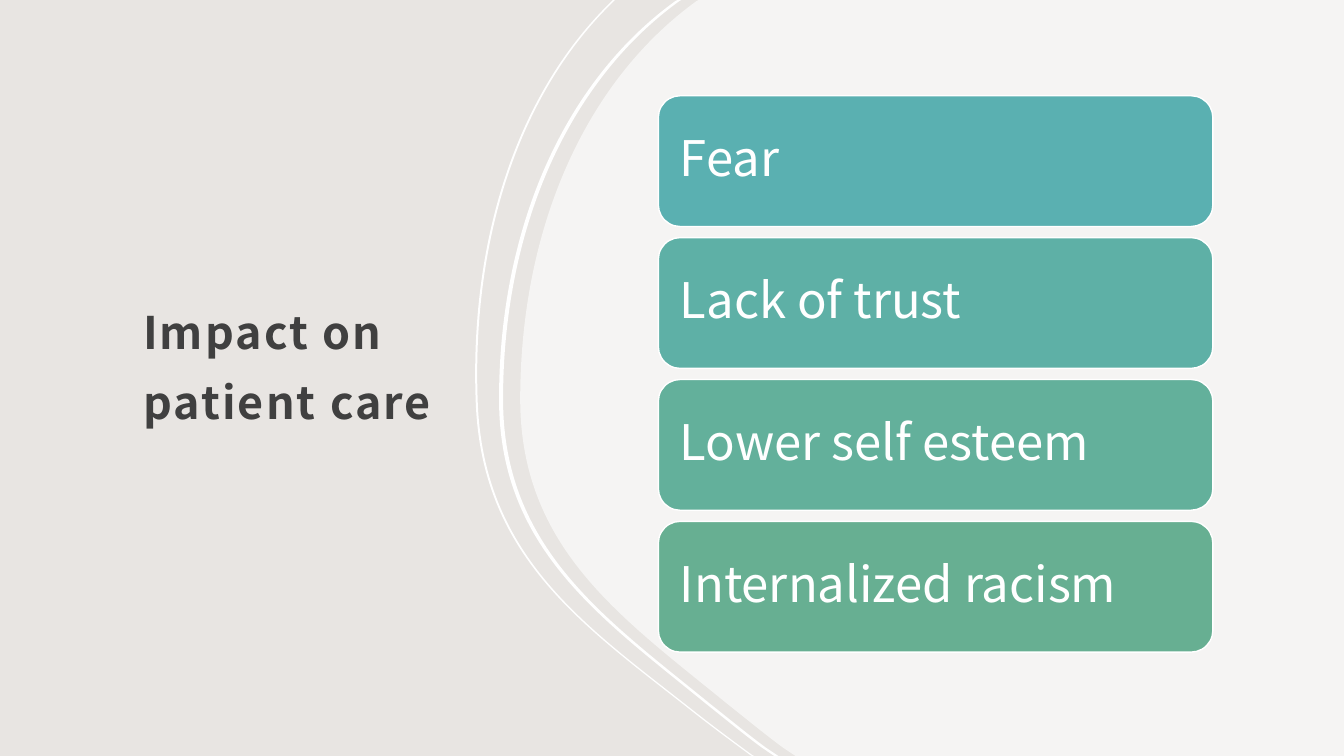
import pptx
import pptx.util
import pptx.dml.color
import pptx.enum.shapes
import pptx.enum.text
import pptx.oxml.ns
import lxml.etree

WIDE, HIGH = 13.33, 7.5
FONT = "Noto Sans CJK JP"
WHITE = "FFFFFF"
ITEMS = [
    ("Fear", "5AB0B1"),
    ("Lack of trust", "5EB0A6"),
    ("Lower self esteem", "63B09B"),
    ("Internalized racism", "67AF92"),
]
MAIN = [
    [(6.93, 0), (6.91, 0.01)],
    [(6.91, 0.01), (5.79, 0.82), (5.16, 2.29), (5.16, 3.96)],
    [(5.16, 3.96), (5.16, 5.44), (6.17, 6.13), (7.21, 6.98)],
    [(7.21, 6.98), (7.4, 7.13), (7.58, 7.28), (7.77, 7.42)],
    [(7.77, 7.42), (7.89, 7.5)],
]
OUTER = [
    [(6.08, 0), (6.05, 0.03)],
    [(6.05, 0.03), (5.12, 0.94), (4.65, 2.4), (4.72, 4.02)],
    [(4.72, 4.02), (4.79, 5.55), (5.82, 6.23), (6.87, 7.06)],
    [(6.87, 7.06), (7.06, 7.21), (7.25, 7.35), (7.44, 7.49)],
    [(7.44, 7.49), (7.46, 7.5)],
]


def paint(part, color):
    """Give a fill, line or font one solid colour."""
    if hasattr(part, "solid"):
        part.solid()
        part = part.fore_color
    else:
        part = part.color
    part.rgb = pptx.dml.color.RGBColor.from_string(color)


def style(item, form):
    """Set attributes from a dict of format values."""
    for name, value in form.items():
        setattr(item, name, value)


def shift(edge, dx):
    """Move an edge sideways."""
    return [[(x + dx, y) for x, y in part] for part in edge]


def flip(edge):
    """Run along an edge the other way."""
    return [part[::-1] for part in edge[::-1]]


def scaled(spot):
    """Turn a point in inches into drawing units."""
    return tuple(pptx.util.Inches(v) for v in spot)


def bend(shape, edge):
    """Swap the straight steps of a shape for its cubic curves."""
    name = pptx.oxml.ns.qn
    lines = list(shape._element.iter(name("a:lnTo")))
    for line, part in zip(lines, edge):
        if len(part) == 2:
            continue
        curve = lxml.etree.Element(name("a:cubicBezTo"))
        for x, y in map(scaled, part[1:]):
            lxml.etree.SubElement(curve, name("a:pt"), x=str(x - shape.left),
                                  y=str(y - shape.top))
        line.getparent().replace(line, curve)


def outline(slide, edge, alpha=None):
    """Draw a closed white outline."""
    pen = slide.shapes.build_freeform(*scaled(edge[0][0]), scale=1.0)
    pen.add_line_segments([scaled(part[-1]) for part in edge], close=True)
    shape = pen.convert_to_shape()
    bend(shape, edge)
    shape.shadow.inherit = False
    shape.line.fill.background()
    paint(shape.fill, WHITE)
    if alpha:
        tone = next(shape._element.spPr.iter(pptx.oxml.ns.qn("a:srgbClr")))
        lxml.etree.SubElement(tone, pptx.oxml.ns.qn("a:alpha"),
                              val=str(alpha * 1000))


def ribbon(slide, edge, wide):
    """Draw a thin band along an edge."""
    back = flip(shift(edge, wide))
    outline(slide, edge + [[edge[-1][-1], back[0][0]]] + back)


def curves(slide, wide, high):
    """Draw the pale panel and its two bands."""
    foot, head = (wide, high), (wide, 0)
    side = [[MAIN[-1][-1], foot], [foot, head]]
    outline(slide, MAIN + side, alpha=60)
    ribbon(slide, OUTER, 0.02)
    ribbon(slide, shift(MAIN, -0.21), 0.04)


def place(shape, box):
    """Move a shape to a box in inches."""
    names = "left", "top", "width", "height"
    style(shape, {n: pptx.util.Inches(v) for n, v in zip(names, box)})


def write(shape, text, pad, form, lead, color):
    """Fill a shape with one formatted paragraph."""
    frame = shape.text_frame
    names = "margin_left", "margin_top", "margin_right", "margin_bottom"
    style(frame, {n: pptx.util.Inches(v) for n, v in zip(names, pad)})
    style(frame, {"word_wrap": True,
                  "auto_size": pptx.enum.text.MSO_AUTO_SIZE.NONE,
                  "vertical_anchor": pptx.enum.text.MSO_ANCHOR.MIDDLE})
    frame.text = text
    para = frame.paragraphs[0]
    style(para, {"alignment": pptx.enum.text.PP_ALIGN.LEFT,
                 "line_spacing": lead})
    run = para.runs[0]
    style(run.font, {"name": FONT, **form})
    paint(run.font.fill, color)
    return run


def heading(slide, box):
    """Place the slide title."""
    title = slide.shapes.title
    place(title, box)
    form = {"size": pptx.util.Pt(32), "bold": True}
    run = write(title, "Impact on patient care", (0.12, 0.12, 0.12, 0.1),
                form, 1.3, "404040")
    run.font._element.set("spc", "150")


def cards(slide, box, gap):
    """Stack one rounded card per item in a box."""
    left, top, wide, high = box
    pitch = (high + gap) / len(ITEMS)
    for row, (text, color) in enumerate(ITEMS):
        card = slide.shapes.add_shape(
            pptx.enum.shapes.MSO_SHAPE.ROUNDED_RECTANGLE, 0, 0, 0, 0)
        place(card, (left, top + row * pitch, wide, pitch - gap))
        card.shadow.inherit = False
        paint(card.fill, color)
        paint(card.line, WHITE)
        card.line.width = pptx.util.Pt(1)
        write(card, text, [0.15] * 4, {"size": pptx.util.Pt(35)}, 0.9, WHITE)


def main():
    """Build and save the slide."""
    deck = pptx.Presentation()
    style(deck, {"slide_width": pptx.util.Inches(WIDE),
                 "slide_height": pptx.util.Inches(HIGH)})
    slide = deck.slides.add_slide(deck.slide_layouts[5])
    paint(slide.background.fill, "E8E5E2")
    curves(slide, WIDE, HIGH)
    heading(slide, (1.3, 1.21, 3.3, 4.68))
    cards(slide, (6.53, 0.95, 5.5, 5.52), 0.11)
    deck.save("out.pptx")


if __name__ == "__main__":
    main()
